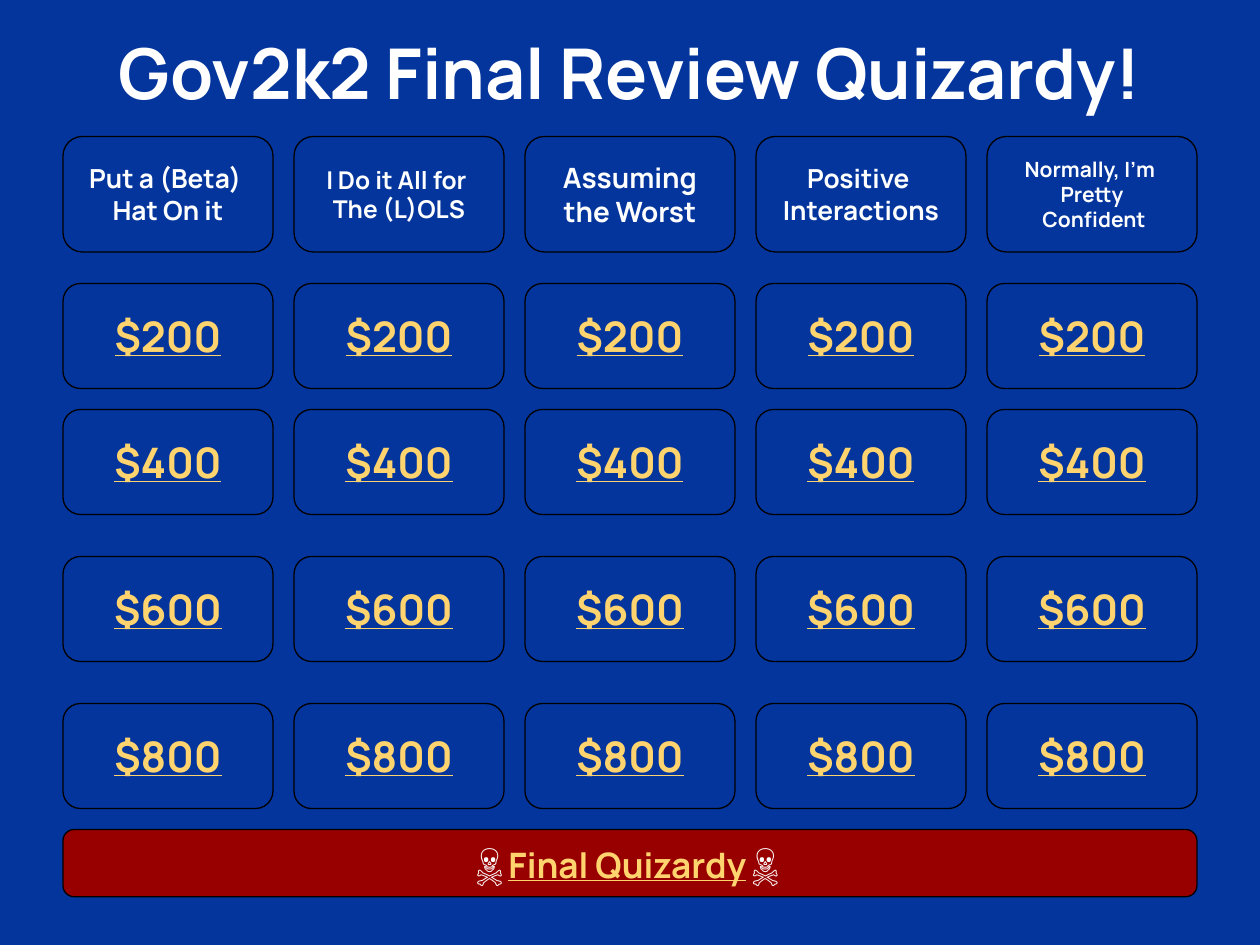
from dataclasses import dataclass

from pptx import Presentation
from pptx.dml.color import RGBColor
from pptx.enum.shapes import MSO_SHAPE
from pptx.enum.text import MSO_ANCHOR, PP_ALIGN
from pptx.util import Pt

COLORS = {
    "board": "03359D",
    "final": "980000",
    "outline": "000000",
    "white": "FFFFFF",
    "gold": "FFD46E",
}
FONT = "Manrope"

LEFT, COLUMN_STEP, TILE_WIDTH = 36, 132, 120
HEADER_TOP, HEADER_HEIGHT = 78, 66
VALUE_HEIGHT = 60
BOARD_WIDTH = 648


@dataclass(frozen=True)
class TextRun:
    text: str
    size: float
    color: str = "white"
    underline: bool = False


@dataclass(frozen=True)
class Category:
    lines: tuple[str, ...]
    size: float


@dataclass(frozen=True)
class ValueRow:
    label: str
    top: float


CATEGORIES = (
    Category(("Put a (Beta) ", "Hat On it"), 15),
    Category(("I Do it All for ", "The (L)OLS"), 14),
    Category(("Assuming the Worst",), 16),
    Category(("Positive ", "Interactions"), 15),
    Category(("Normally, I’m ", "Pretty", " Confident"), 12),
)
VALUE_ROWS = (
    ValueRow("$200", 162),
    ValueRow("$400", 234),
    ValueRow("$600", 318),
    ValueRow("$800", 402),
)
SKULL = TextRun("☠", 22)
SPACE = TextRun(" ", 14)
FINAL_ROUND = (SKULL, SPACE, TextRun("Final Quizardy", 20, "gold", True), SPACE, SKULL, SPACE)


def rgb(name: str) -> RGBColor:
    return RGBColor.from_string(COLORS[name])


def write_text(shape, paragraphs: list[list[TextRun]]) -> None:
    frame = shape.text_frame
    frame.word_wrap = True
    frame.vertical_anchor = MSO_ANCHOR.MIDDLE
    for index, text_runs in enumerate(paragraphs):
        paragraph = frame.add_paragraph() if index else frame.paragraphs[0]
        paragraph.alignment = PP_ALIGN.CENTER
        for text_run in text_runs:
            run = paragraph.add_run()
            run.text = text_run.text
            run.font.name = FONT
            run.font.size = Pt(text_run.size)
            run.font.bold = True
            run.font.underline = text_run.underline
            run.font.color.rgb = rgb(text_run.color)


def add_tile(slide, left: float, top: float, width: float, height: float,
             paragraphs: list[list[TextRun]], fill: str = "board") -> None:
    shape = slide.shapes.add_shape(MSO_SHAPE.FLOWCHART_ALTERNATE_PROCESS,
                                   Pt(left), Pt(top), Pt(width), Pt(height))
    shape.shadow.inherit = False
    shape.fill.solid()
    shape.fill.fore_color.rgb = rgb(fill)
    shape.line.color.rgb = rgb("outline")
    shape.line.width = Pt(0.75)
    write_text(shape, paragraphs)


def add_title(slide, text: str) -> None:
    title = slide.shapes.title
    title.left, title.top = Pt(LEFT), Pt(21.6)
    title.width, title.height = Pt(BOARD_WIDTH), Pt(38.4)
    write_text(title, [[TextRun(text, 40)]])


def main() -> None:
    presentation = Presentation()
    presentation.slide_width, presentation.slide_height = Pt(720), Pt(540)
    slide = presentation.slides.add_slide(presentation.slide_layouts[5])
    slide.background.fill.solid()
    slide.background.fill.fore_color.rgb = rgb("board")

    add_title(slide, "Gov2k2 Final Review Quizardy!")
    for column, category in enumerate(CATEGORIES):
        left = LEFT + column * COLUMN_STEP
        heading = [[TextRun(line, category.size)] for line in category.lines]
        add_tile(slide, left, HEADER_TOP, TILE_WIDTH, HEADER_HEIGHT, heading)
        for row in VALUE_ROWS:
            value = [[TextRun(row.label, 24, "gold", True)]]
            add_tile(slide, left, row.top, TILE_WIDTH, VALUE_HEIGHT, value)
    add_tile(slide, LEFT, 474, BOARD_WIDTH, 38.4, [list(FINAL_ROUND)], "final")

    presentation.save("out.pptx")


if __name__ == "__main__":
    main()
